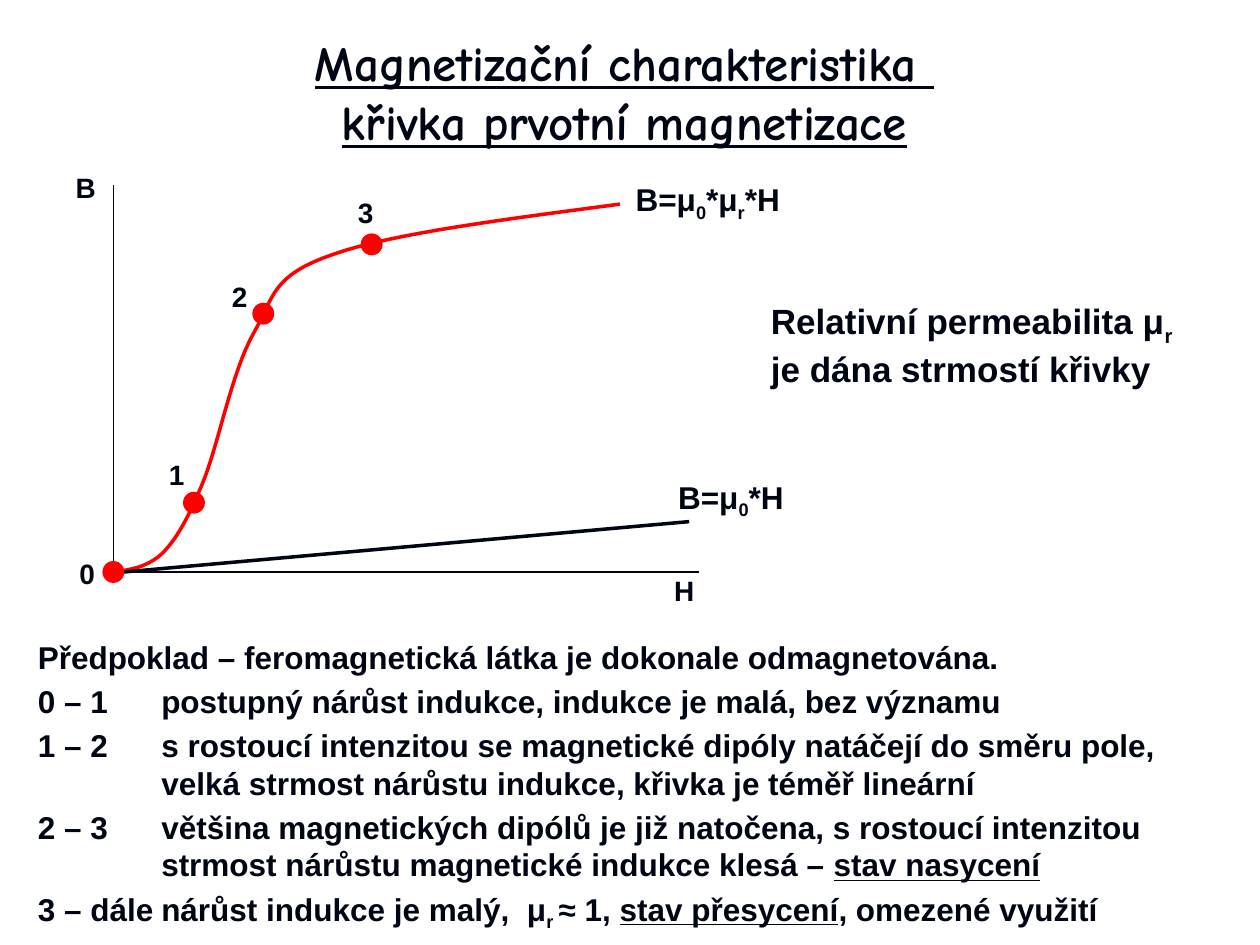
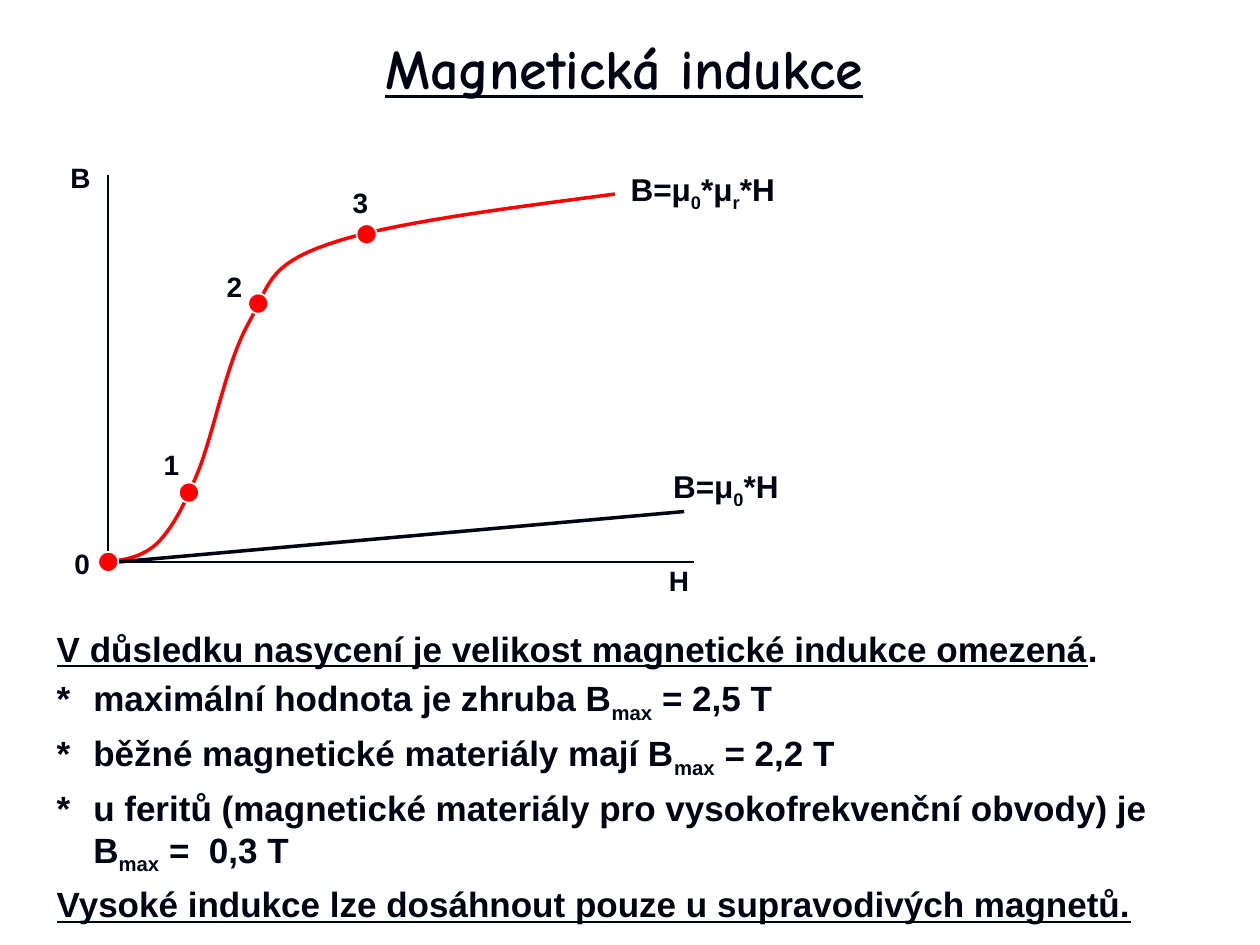
from copy import deepcopy
from pptx import Presentation
from pptx import util as u
from pptx.dml.color import RGBColor
from pptx.enum import shapes, text
from pptx.oxml import ns, xmlchemy

HUE = {"ink": "000514", "red": "FF0000", "white": "FFFFFF"}

# In strings, ~ switches underline and _ switches subscript.
SLIDES = [
    {
        "title": "~Magnetizační charakteristika \nkřivka prvotní magnetizace~",
        "head": (0.27, 0.22, 9.37, 1.01), "head_size": 28,
        "body": (0.2, 5.01, 9.37, 2.45), "size": 18, "hang": 0.98,
        "list": [
            "Předpoklad – feromagnetická látka je dokonale odmagnetována.",
            "0 – 1\tpostupný nárůst indukce, indukce je malá, bez významu",
            "1 – 2\ts rostoucí intenzitou se magnetické dipóly natáčejí do směru pole, "
            "velká strmost nárůstu indukce, křivka je téměř lineární",
            "2 – 3\tvětšina magnetických dipólů je již natočena, s rostoucí intenzitou "
            "strmost nárůstu magnetické indukce klesá – ~stav nasycení~",
            "3 – dále\tnárůst indukce je malý,  μ_r _≈ 1, ~stav přesycení~, omezené využití",
        ],
        "zero": (0.9, 4.54), "rim": "red",
        "note": ("Relativní permeabilita μ_r_ je dána strmostí křivky", (6.02, 2.33, 3.54, 0.77)),
    },
    {
        "title": "~Magnetická indukce~",
        "head": (0.27, 0.22, 9.37, 0.62), "head_size": 32,
        "body": (0.35, 4.93, 9.06, 2.39), "size": 20, "hang": 0.29,
        "list": [
            "~V důsledku nasycení je velikost magnetické indukce omezená~.",
            "*\tmaximální hodnota je zhruba B_max_ = 2,5 T",
            "*\tběžné magnetické materiály mají B_max_ = 2,2 T",
            "*\tu feritů (magnetické materiály pro vysokofrekvenční obvody) je B_max_ =  0,3 T",
            "~Vysoké indukce lze dosáhnout pouze u supravodivých magnetů.~",
        ],
        "zero": (0.86, 4.46), "rim": "white",
    },
]

AXES = [(0, -3.07), (0, 0), (4.65, 0)]
CURVE = [
    (0, 0), (0.14, -0.02), (0.28, -0.04), (0.4, -0.16),
    (0.51, -0.28), (0.59, -0.42), (0.71, -0.71),
    (0.83, -1), (0.94, -1.59), (1.11, -1.89),
    (1.28, -2.19), (1.25, -2.35), (1.74, -2.52),
    (2.22, -2.69), (3.12, -2.8), (4.02, -2.92),
]
VACUUM = [(0.08, 0), (4.57, -0.4)]
DOTS = [(0, 0), (0.64, -0.55), (1.19, -2.05), (2.05, -2.6)]
DOT = 0.16
LABELS = [
    ("B", 16, (-0.34, -3.23, 0.24, 0.35)),
    ("H", 16, (4.41, -0.03, 0.24, 0.35)),
    ("0", 16, (-0.31, -0.16, 0.2, 0.35)),
    ("1", 16, (0.4, -0.95, 0.2, 0.35)),
    ("2", 16, (0.9, -2.36, 0.2, 0.35)),
    ("3", 16, (1.9, -3.03, 0.2, 0.35)),
    ("B=μ_0_*H", 18, (4.44, -0.79, 0.92, 0.38)),
    ("B=μ_0_*μ_r_*H", 18, (4.1, -3.15, 1.23, 0.38)),
]
TIGHT = {f"margin_{side}": u.Inches(0.04) for side in ("left", "right", "top", "bottom")}
TIGHT["word_wrap"] = False


def apply(obj, look):
    for key, val in look.items():
        setattr(obj, key, val)


def tint(name):
    return RGBColor.from_string(HUE[name])


def place(shape, box):
    apply(shape, dict(zip(("left", "top", "width", "height"), map(u.Inches, box))))


def add_run(para, words, size, face, line, low):
    run = para.add_run()
    run.text = words
    apply(run.font, {"size": u.Pt(size), "name": face, "bold": True, "underline": line})
    run.font.color.rgb = tint("ink")
    if low:
        run._r.get_or_add_rPr().set("baseline", "-25000")
    return run


def write(para, words, size, face="Arial"):
    for i, part in enumerate(words.split("~")):
        for j, bit in enumerate(part.split("_")):
            for k, row in enumerate(bit.split("\n")):
                if k:
                    para.add_line_break()
                    gap = para._p.findall(ns.qn("a:br"))[-1]
                    gap.insert(0, deepcopy(run._r.rPr))
                if row:
                    run = add_run(para, row, size, face, i % 2 == 1, j % 2 == 1)


def stroke(shape, name, width):
    shape.line.color.rgb = tint(name)
    shape.line.width = u.Pt(width)


def bend(knots, steps=16):
    dots = [knots[0]]
    for n in range(0, len(knots) - 1, 3):
        for s in range(1, steps + 1):
            t = s / steps
            mix = ((1 - t) ** 3, 3 * t * (1 - t) ** 2, 3 * t * t * (1 - t), t ** 3)
            dots.append(tuple(sum(m * p[a] for m, p in zip(mix, knots[n:n + 4])) for a in (0, 1)))
    return dots


def trace(slide, points, name, width):
    spots = [tuple(map(u.Inches, p)) for p in points]
    pen = slide.shapes.build_freeform(*spots[0])
    pen.add_line_segments(spots[1:], close=False)
    path = pen.convert_to_shape()
    path.fill.background()
    path.shadow.inherit = False
    stroke(path, name, width)


def add_text(slide, words, size, box, look, align):
    area = slide.shapes.add_textbox(*map(u.Inches, box))
    apply(area.text_frame, look)
    para = area.text_frame.paragraphs[0]
    para.alignment = align
    write(para, words, size)


def add_graph(slide, zero, rim):
    def move(points):
        return [(zero[0] + x, zero[1] + y) for x, y in points]

    trace(slide, move(bend(CURVE)), "red", 2)
    trace(slide, move(AXES), "ink", 1)
    ends = [u.Inches(v) for point in move(VACUUM) for v in point]
    ray = slide.shapes.add_connector(shapes.MSO_CONNECTOR.STRAIGHT, *ends)
    stroke(ray, "ink", 2)
    ray._element.spPr.append(xmlchemy.OxmlElement("a:effectLst"))
    for words, size, (x, y, wide, high) in LABELS:
        box = (zero[0] + x, zero[1] + y, wide, high)
        add_text(slide, words, size, box, TIGHT, text.PP_ALIGN.RIGHT)
    for x, y in move(DOTS):
        box = map(u.Inches, (x - DOT / 2, y - DOT / 2, DOT, DOT))
        dot = slide.shapes.add_shape(shapes.MSO_SHAPE.OVAL, *box)
        dot.shadow.inherit = False
        dot.fill.solid()
        dot.fill.fore_color.rgb = tint("red")
        stroke(dot, rim, 1)


def add_list(body, lines, size, hang):
    frame = body.text_frame
    frame.auto_size = text.MSO_AUTO_SIZE.NONE
    for n, words in enumerate(lines):
        para = frame.add_paragraph() if n else frame.paragraphs[0]
        props = para._p.get_or_add_pPr()
        props.set("marL", str(u.Inches(hang)))
        props.set("indent", str(-u.Inches(hang)))
        props.append(xmlchemy.OxmlElement("a:buNone"))
        write(para, words, size)


def add_slide(deck, data):
    slide = deck.slides.add_slide(deck.slide_layouts[1])
    head, body = slide.shapes.title, slide.placeholders[1]
    place(head, data["head"])
    apply(head.text_frame, {"auto_size": text.MSO_AUTO_SIZE.NONE,
                            "vertical_anchor": text.MSO_ANCHOR.MIDDLE})
    write(head.text_frame.paragraphs[0], data["title"], data["head_size"], "Comic Neue")
    place(body, data["body"])
    add_list(body, data["list"], data["size"], data["hang"])
    add_graph(slide, data["zero"], data["rim"])
    if "note" in data:
        words, box = data["note"]
        add_text(slide, words, 20, box, {"word_wrap": True}, text.PP_ALIGN.LEFT)


def main():
    deck = Presentation()
    apply(deck, {"slide_width": u.Inches(10), "slide_height": u.Inches(7.5)})
    for data in SLIDES:
        add_slide(deck, data)
    deck.save("out.pptx")


if __name__ == "__main__":
    main()
